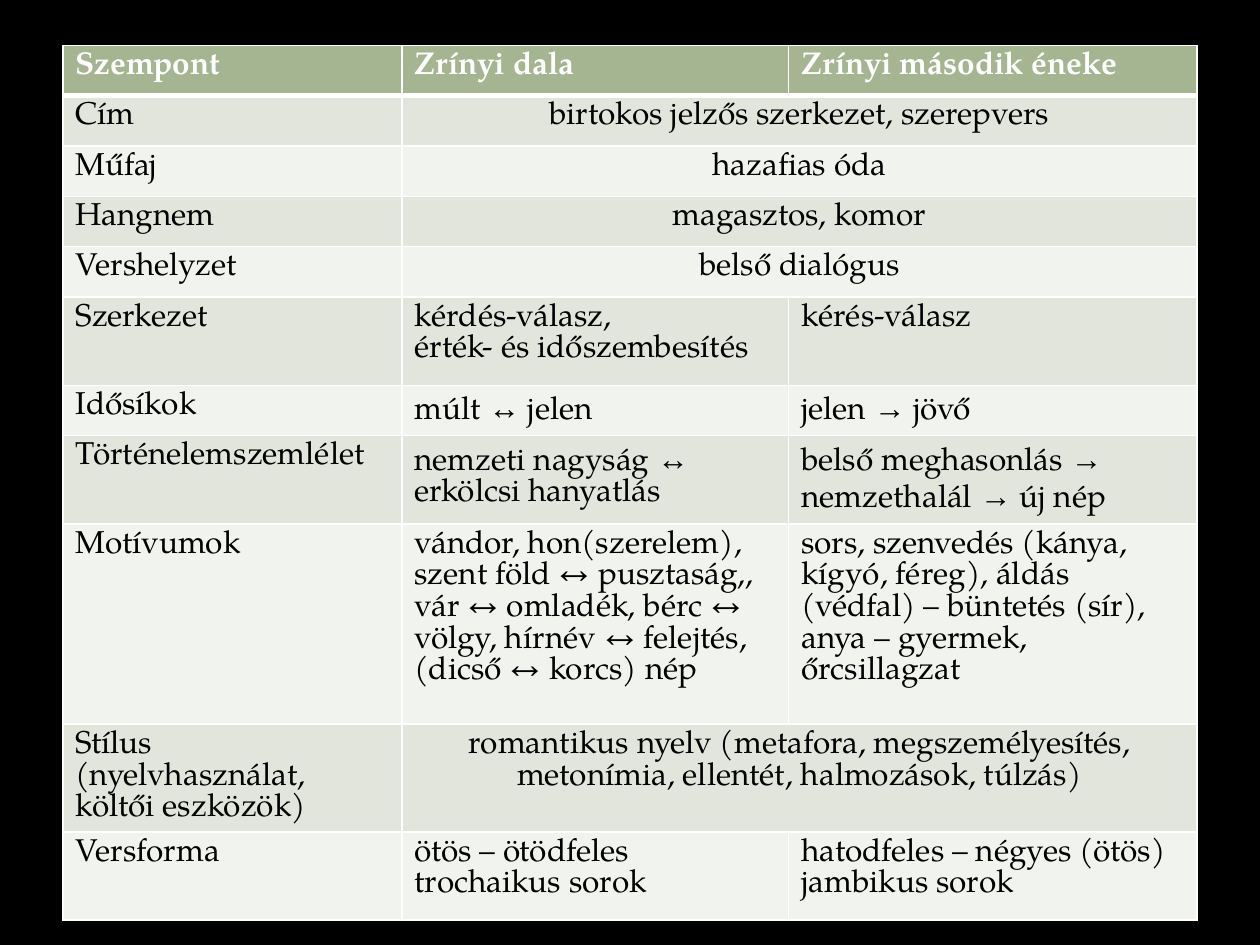
from lxml import etree
from pptx import Presentation
from pptx.dml.color import RGBColor
from pptx.enum.text import PP_ALIGN
from pptx.oxml.ns import qn
from pptx.util import Inches, Pt

CENTER, LEFT = PP_ALIGN.CENTER, PP_ALIGN.LEFT
SLIDE_W, SLIDE_H = Inches(10), Inches(7.5)
COLORS = {
    "background": "000000", "header": "A5B592", "odd": "E1E5DC",
    "even": "F0F3EE", "text": "000000", "header_text": "FFFFFF", "border": "FFFFFF",
}
BODY_FONT, ARROW_FONT = "TeX Gyre Pagella", "Times New Roman"
ARROW_MARK = "|"
COLUMN_WIDTHS = [2.69, 3.07, 3.24]
ROW_HEIGHTS = [4, 4, 4, 4, 4, 7, 4, 7, 15.9, 7, 7]
COMPARISON = [
    ["Szempont", "Zrínyi dala", "Zrínyi második éneke"],
    ["Cím", "birtokos jelzős szerkezet, szerepvers"],
    ["Műfaj", "hazafias óda"],
    ["Hangnem", "magasztos, komor"],
    ["Vershelyzet", "belső dialógus"],
    ["Szerkezet", "kérdés-válasz,\nérték- és időszembesítés", "kérés-válasz"],
    ["Idősíkok", "múlt |↔| jelen", "jelen |→| jövő"],
    ["Történelemszemlélet", "nemzeti nagyság |↔ |erkölcsi hanyatlás",
     "belső meghasonlás |→|\nnemzethalál |→| új nép"],
    ["Motívumok",
     "vándor, hon(szerelem), szent föld ↔ pusztaság,, vár ↔ omladék, "
     "bérc ↔ völgy, hírnév ↔ felejtés, (dicső ↔ korcs) nép",
     "sors, szenvedés (kánya, kígyó, féreg), áldás (védfal) – büntetés (sír), "
     "anya – gyermek, őrcsillagzat"],
    ["Stílus (nyelvhasználat, költői eszközök)",
     "romantikus nyelv (metafora, megszemélyesítés, metonímia, ellentét, "
     "halmozások, túlzás)"],
    ["Versforma", "ötös – ötödfeles trochaikus sorok",
     "hatodfeles – négyes (ötös) jambikus sorok"],
]


def rgb(role):
    """Return the colour that belongs to a role."""
    return RGBColor.from_string(COLORS[role])


def style_cell(cell, row_index):
    """Draw the borders and the fill of one cell."""
    widths = {"lnL": 1, "lnR": 1, "lnT": 3 if row_index == 1 else 1,
              "lnB": 3 if row_index == 0 else 1}
    properties = cell._tc.get_or_add_tcPr()
    for side, width in widths.items():
        border = etree.SubElement(properties, qn(f"a:{side}"), w=str(Pt(width)))
        solid = etree.SubElement(border, qn("a:solidFill"))
        etree.SubElement(solid, qn("a:srgbClr"), val=COLORS["border"])
    cell.fill.solid()
    band = "odd" if row_index % 2 else "even"
    cell.fill.fore_color.rgb = rgb(band if row_index else "header")


def write_cell(cell, content, is_header, alignment):
    """Write lines of text, with marked arrows in the arrow font."""
    frame = cell.text_frame
    for line_index, line in enumerate(content.split("\n")):
        paragraph = frame.add_paragraph() if line_index else frame.paragraphs[0]
        paragraph.alignment = alignment
        for part_index, part in enumerate(line.split(ARROW_MARK)):
            if not part:
                continue
            run = paragraph.add_run()
            run.text = part
            formats = {"size": Pt(18), "bold": is_header,
                       "name": ARROW_FONT if part_index % 2 else BODY_FONT}
            for attribute, value in formats.items():
                setattr(run.font, attribute, value)
            run.font.color.rgb = rgb("header_text" if is_header else "text")


def add_comparison(slide, left, top, width, height):
    """Place the comparison of the two poems in the given box."""
    table = slide.shapes.add_table(
        len(COMPARISON), len(COLUMN_WIDTHS), left, top, width, height).table
    for column, share in zip(table.columns, COLUMN_WIDTHS):
        column.width = int(width * share / sum(COLUMN_WIDTHS))
    for row, share in zip(table.rows, ROW_HEIGHTS):
        row.height = int(height * share / sum(ROW_HEIGHTS))
    for row_index, contents in enumerate(COMPARISON):
        for column_index in range(len(COLUMN_WIDTHS)):
            style_cell(table.cell(row_index, column_index), row_index)
        shared = len(contents) < len(COLUMN_WIDTHS)
        if shared:
            table.cell(row_index, 1).merge(table.cell(row_index, 2))
        for column_index, content in enumerate(contents):
            alignment = CENTER if shared and column_index else LEFT
            write_cell(table.cell(row_index, column_index), content,
                       row_index == 0, alignment)


def main():
    """Build and save the slide."""
    presentation = Presentation()
    presentation.slide_width, presentation.slide_height = SLIDE_W, SLIDE_H
    slide = presentation.slides.add_slide(presentation.slide_layouts[6])
    slide.background.fill.solid()
    slide.background.fill.fore_color.rgb = rgb("background")
    add_comparison(slide, int(SLIDE_W * 0.05), int(SLIDE_H * 0.048),
                   int(SLIDE_W * 0.9), Inches(6.79))
    presentation.save("out.pptx")


if __name__ == "__main__":
    main()
